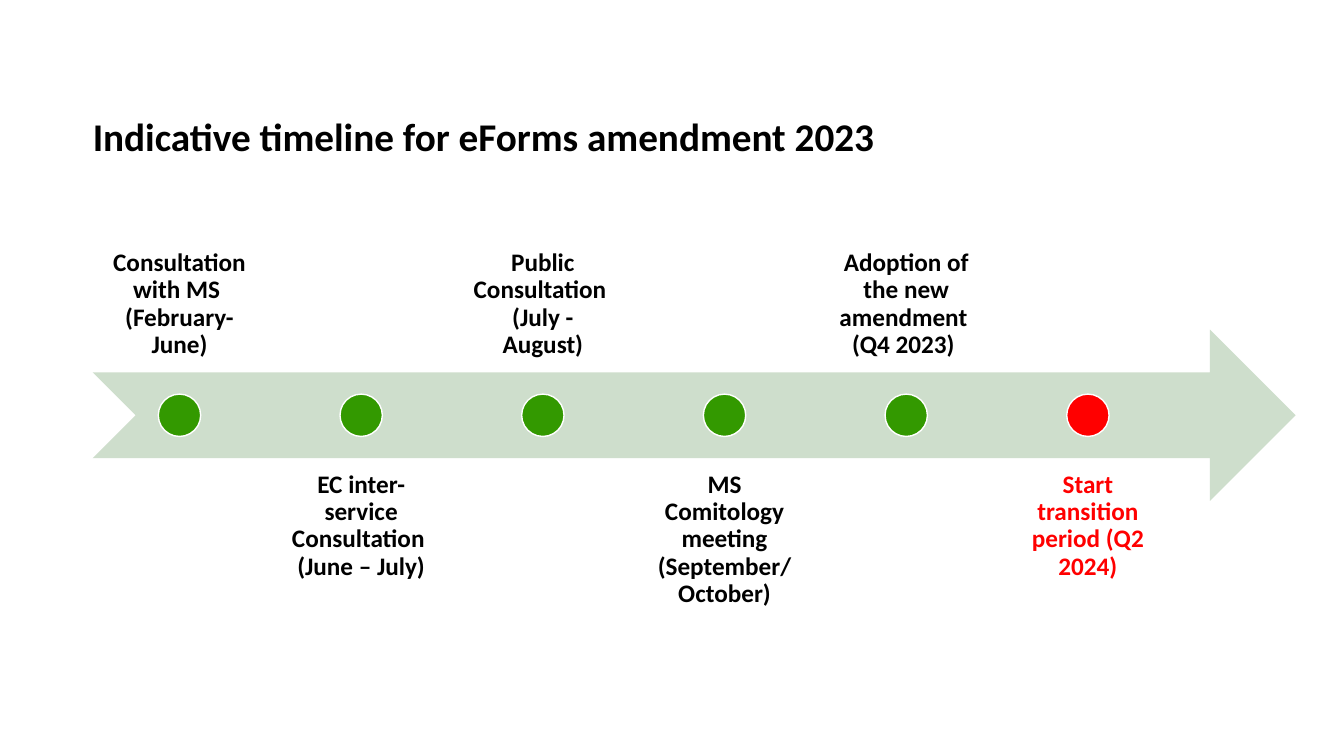
from pptx import Presentation
from pptx.dml.color import RGBColor
from pptx.enum.shapes import MSO_SHAPE
from pptx.enum.text import MSO_ANCHOR, MSO_AUTO_SIZE, PP_ALIGN
from pptx.util import Inches, Pt

BLACK, WHITE, RED = "000000", "FFFFFF", "FF0000"
GREEN, PALE_GREEN = "339900", "CEDECC"


def color(hex_string):
    return RGBColor.from_string(hex_string)


def write_text(shape, lines, size, text_color, alignment, anchor, margins):
    """Fill a shape with one bold paragraph, broken into the given lines."""
    frame = shape.text_frame
    frame.word_wrap = True
    frame.auto_size = MSO_AUTO_SIZE.NONE
    frame.vertical_anchor = anchor
    (frame.margin_left, frame.margin_top,
     frame.margin_right, frame.margin_bottom) = [Inches(margin) for margin in margins]
    paragraph = frame.paragraphs[0]
    paragraph.alignment = alignment
    paragraph.line_spacing = 0.9
    for index, line in enumerate(lines):
        if index:
            paragraph.add_line_break()
        run = paragraph.add_run()
        run.text = line
        run.font.name = "Calibri"
        run.font.size = Pt(size)
        run.font.bold = True
        run.font.color.rgb = color(text_color)


presentation = Presentation()
presentation.slide_width = Inches(13.33)
presentation.slide_height = Inches(7.5)
slide = presentation.slides.add_slide(presentation.slide_layouts[5])
slide.background.fill.solid()
slide.background.fill.fore_color.rgb = color(WHITE)

# Title
title = slide.shapes.title
title.left, title.top = Inches(0.92), Inches(0.14)
title.width, title.height = Inches(11.48), Inches(1.45)
write_text(title, ["Indicative timeline for eForms amendment 2023"], 28, BLACK,
           PP_ALIGN.LEFT, MSO_ANCHOR.BOTTOM, (0, 0.05, 0, 0))

# Timeline arrow
arrow = slide.shapes.add_shape(MSO_SHAPE.NOTCHED_RIGHT_ARROW, Inches(0.92),
                               Inches(3.27), Inches(11.93), Inches(1.7))
arrow.shadow.inherit = False
arrow.fill.solid()
arrow.fill.fore_color.rgb = color(PALE_GREEN)
arrow.line.fill.background()

# Milestones: label lines, label width, label colour, dot colour
milestones = [
    (["Consultation with MS ", "(February- June)"], 1.72, BLACK, GREEN),
    (["EC inter-service Consultation ", "(June – July)"], 1.72, BLACK, GREEN),
    (["Public Consultation ", "(July - August)"], 1.72, BLACK, GREEN),
    (["MS Comitology meeting (September/", "October)"], 1.72, BLACK, GREEN),
    (["Adoption of the new amendment ", "(Q4 2023) "], 1.72, BLACK, GREEN),
    (["Start transition period (Q2 2024)"], 1.58, RED, RED),
]
FIRST_CENTER, STEP = 1.78, 1.802
DOT_TOP, DOT_SIZE = 3.91, 0.42

for index, (lines, width, label_color, dot_color) in enumerate(milestones):
    center = FIRST_CENTER + index * STEP

    # Labels alternate above and below the arrow
    above = index % 2 == 0 
    label = slide.shapes.add_textbox(Inches(center - width / 2),
                                     Inches(2 if above else 4.54),
                                     Inches(width), Inches(1.7))
    write_text(label, lines, 18, label_color, PP_ALIGN.CENTER,
               MSO_ANCHOR.BOTTOM if above else MSO_ANCHOR.TOP, (0.14,) * 4)

    # Dot on the arrow
    dot = slide.shapes.add_shape(MSO_SHAPE.OVAL, Inches(center - DOT_SIZE / 2),
                                 Inches(DOT_TOP), Inches(DOT_SIZE), Inches(DOT_SIZE))
    dot.shadow.inherit = False
    dot.fill.solid()
    dot.fill.fore_color.rgb = color(dot_color)
    dot.line.color.rgb = color(WHITE)
    dot.line.width = Pt(1)

presentation.save("out.pptx")
